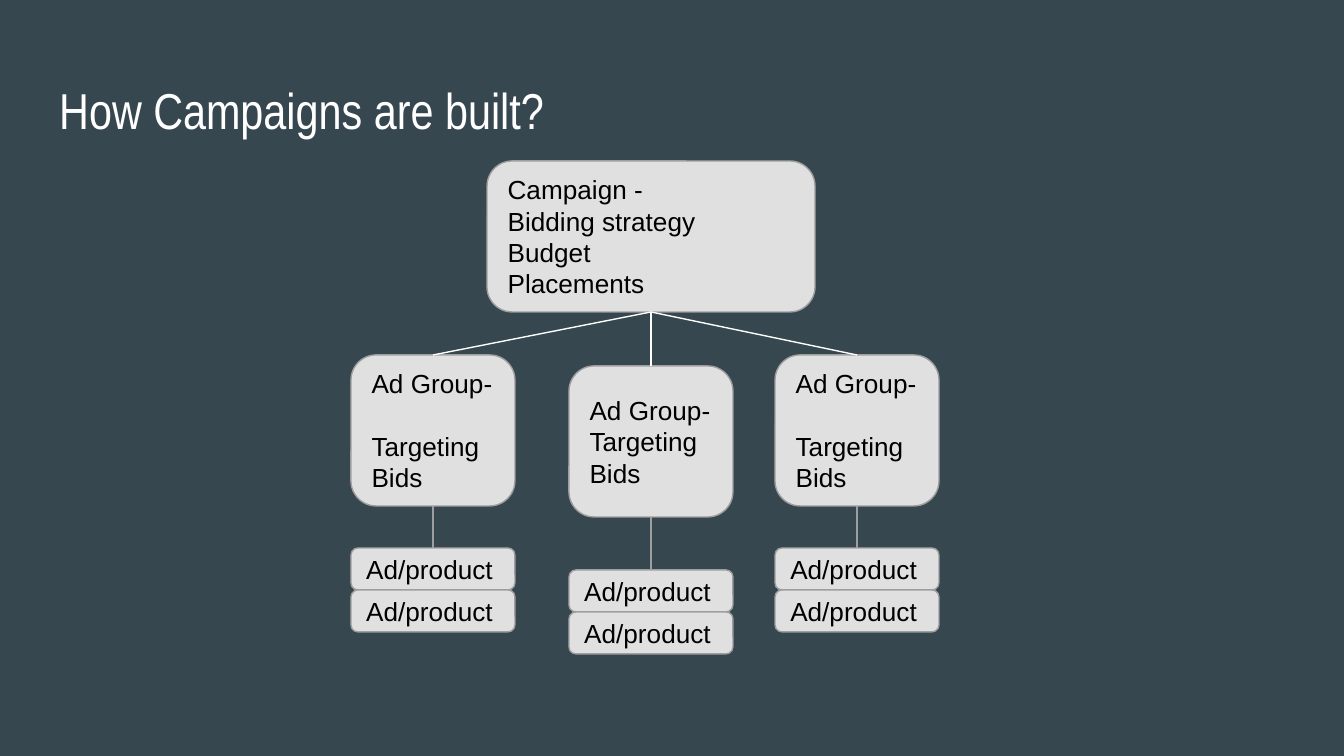
"""Build a slide showing how campaigns split into ad groups and products."""
from lxml import etree
from pptx import Presentation
from pptx import util as u
from pptx.dml.color import RGBColor
from pptx.enum import shapes, text
from pptx.oxml.ns import qn

TITLE = "How Campaigns are built?"
CAMPAIGN = ["Campaign -", "Bidding strategy", "Budget", "Placements"]
GROUP = ["Ad Group-", "Targeting", "Bids"]
PRODUCTS = ["Ad/product", "Ad/product"]
COLUMNS = [
    {"left": 351, "top": 355, "products_top": 548, "gap": 16.8},
    {"left": 569, "top": 366, "products_top": 570, "gap": 0},
    {"left": 775, "top": 355, "products_top": 548, "gap": 16.8},
]
CAMPAIGN_BOX = (487, 161, 328, 151)
TITLE_BOX = (46, 66, 1252, 85)
GROUP_WIDTH, GROUP_HEIGHT, PRODUCT_HEIGHT = 164, 151, 42
BACKGROUND, FILL, GREY, WHITE, BLACK = "37474F", "E0E0E0", "9E9E9E", "FFFFFF", "000000"
TITLE_FONT = {"name": "Arial Narrow", "size": u.Pt(27)}
BODY_FONT = {"name": "Arial", "size": u.Pt(14)}
FRAME = {"word_wrap": True, "margin_left": u.Inches(0.1), "margin_right": u.Inches(0.1),
         "margin_top": u.Inches(0.1), "margin_bottom": u.Inches(0.1)}


def px(value):
    return u.Emu(round(value * 914400 / 134.4))


def color(value):
    return RGBColor.from_string(value)


def set_all(target, values):
    for name, value in values.items():
        setattr(target, name, value)


def write(shape, lines, font, font_color, anchor, gap=0):
    frame = shape.text_frame
    set_all(frame, {**FRAME, "vertical_anchor": anchor})
    for index, line in enumerate(lines):
        paragraph = frame.paragraphs[0] if index == 0 else frame.add_paragraph()
        paragraph.text = line
        paragraph.alignment = text.PP_ALIGN.LEFT
        if index == 1 and gap:
            paragraph.space_before = u.Pt(gap)
        set_all(paragraph.font, font)
        paragraph.font.color.rgb = color(font_color)


def add_box(slide, box, lines, gap=0):
    kind = shapes.MSO_SHAPE.FLOWCHART_ALTERNATE_PROCESS
    shape = slide.shapes.add_shape(kind, *map(px, box))
    shape.shadow.inherit = False
    shape.fill.solid()
    shape.fill.fore_color.rgb = color(FILL)
    shape.line.color.rgb = color(GREY)
    shape.line.width = u.Pt(0.75)
    write(shape, lines, BODY_FONT, BLACK, text.MSO_ANCHOR.MIDDLE, gap)
    return shape


def join(slide, upper, lower, line_color):
    connector = slide.shapes.add_connector(shapes.MSO_CONNECTOR.STRAIGHT, 0, 0, 0, 0)
    connector.begin_connect(upper, 2)
    connector.end_connect(lower, 0)
    connector.line.color.rgb = color(line_color)
    connector.line.width = u.Pt(0.75)
    etree.SubElement(connector._element.spPr, qn("a:effectLst"))


def main():
    presentation = Presentation()
    presentation.slide_width, presentation.slide_height = px(1344), px(756)
    slide = presentation.slides.add_slide(presentation.slide_layouts[6])
    slide.background.fill.solid()
    slide.background.fill.fore_color.rgb = color(BACKGROUND)

    title = slide.shapes.add_textbox(*map(px, TITLE_BOX))
    write(title, [TITLE], TITLE_FONT, WHITE, text.MSO_ANCHOR.TOP)

    campaign = add_box(slide, CAMPAIGN_BOX, CAMPAIGN)
    for column in COLUMNS:
        left = column["left"]
        group = add_box(slide, (left, column["top"], GROUP_WIDTH, GROUP_HEIGHT),
                        GROUP, column["gap"])
        products = [
            add_box(slide, (left, column["products_top"] + index * PRODUCT_HEIGHT,
                            GROUP_WIDTH, PRODUCT_HEIGHT), [label])
            for index, label in enumerate(PRODUCTS)
        ]
        join(slide, campaign, group, WHITE)
        join(slide, group, products[0], GREY)

    presentation.save("out.pptx")


if __name__ == "__main__":
    main()
